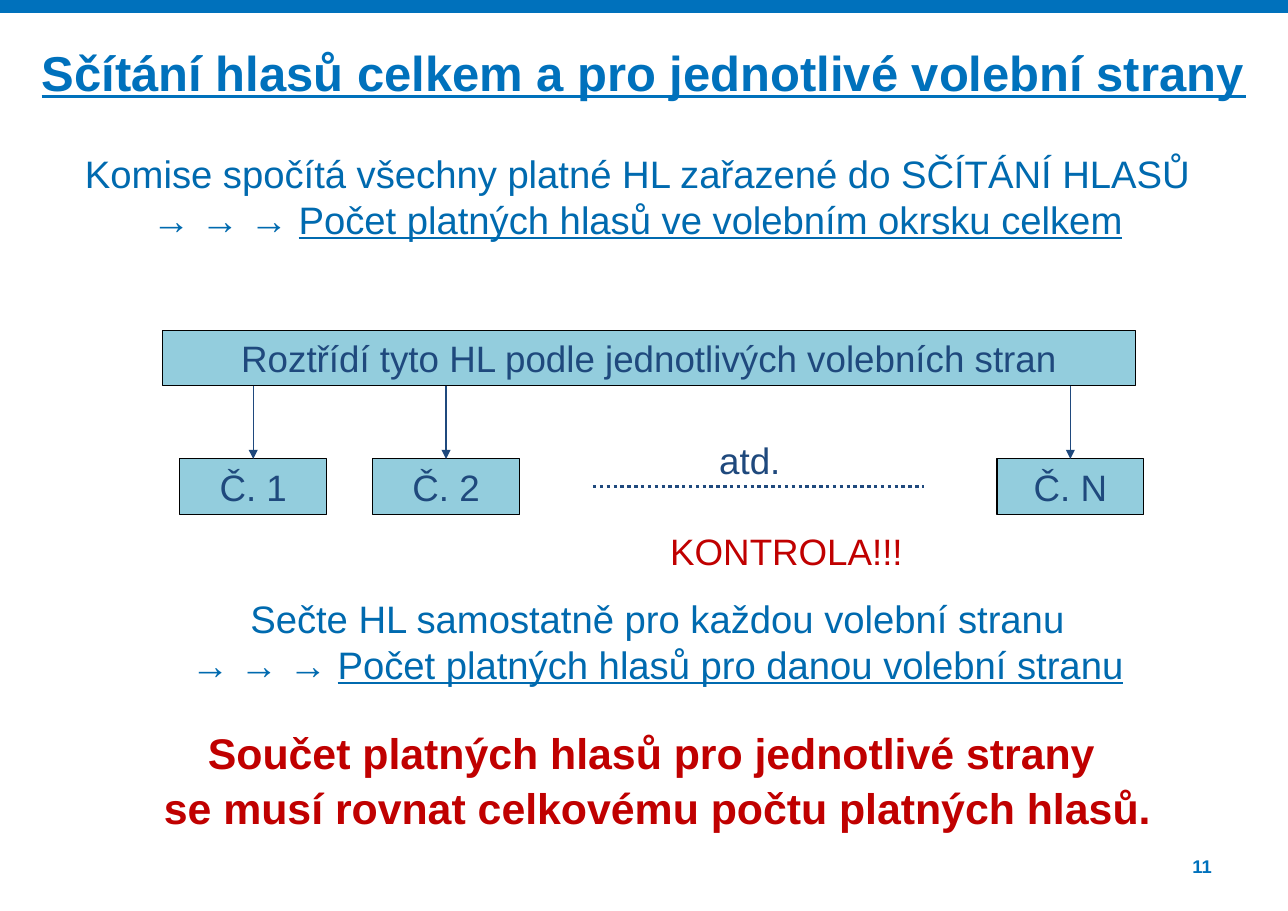
from pptx import Presentation, util as u
from pptx.dml.color import RGBColor
from pptx.enum import dml, shapes, text
from pptx.oxml.ns import qn
from lxml import etree

BLUE, DEEP, NAVY, RED, PALE = "0071BC", "006AAF", "1F497D", "C00000", "93CDDD"
ARROWS = "→ → → "


def color(code):
    return RGBColor.from_string(code)


class Page:
    font = "Arial"

    def __init__(self, deck):
        self.slide = deck.slides.add_slide(deck.slide_layouts[5])

    def words(self, shape, lines, size, ink, bold=False, under=None, align="CENTER",
              inset=(7.2, 3.6), wrap=True, gap=0):
        frame = shape.text_frame
        frame.text = lines
        frame.word_wrap = wrap
        frame.auto_size = text.MSO_AUTO_SIZE.NONE
        frame.vertical_anchor = text.MSO_ANCHOR.TOP
        frame.margin_left = frame.margin_right = u.Pt(inset[0])
        frame.margin_top = frame.margin_bottom = u.Pt(inset[1])
        if under:
            run = frame.paragraphs[-1].add_run()
            run.text = under
            run.font.underline = True
        for i, para in enumerate(frame.paragraphs):
            para.alignment = text.PP_ALIGN[align]
            para.space_before = u.Pt(gap if i else 0)
            for run in para.runs:
                run.font.name = self.font
                run.font.size = u.Pt(size)
                run.font.bold = bold
                run.font.color.rgb = color(ink)

    def title(self, area, lines, size, ink):
        shape = self.slide.shapes.title
        shape.left, shape.top, shape.width, shape.height = map(u.Pt, area)
        self.words(shape, lines, size, ink, bold=True, inset=(0, 0), wrap=False)
        shape.text_frame.paragraphs[0].runs[0].font.underline = True

    def label(self, area, lines, size, ink, **style):
        shape = self.slide.shapes.add_textbox(*map(u.Pt, area))
        self.words(shape, lines, size, ink, **style)

    def box(self, area, fill, lines="", edge=None):
        shape = self.slide.shapes.add_shape(shapes.MSO_SHAPE.RECTANGLE, *map(u.Pt, area))
        shape.shadow.inherit = False
        shape.fill.solid()
        shape.fill.fore_color.rgb = color(fill)
        if edge:
            shape.line.color.rgb = color(edge)
            shape.line.width = u.Pt(0.75)
        else:
            shape.line.fill.background()
        if lines:
            self.words(shape, lines, 24, NAVY)
        return shape

    def line(self, ends, ink, width, dash=None, goal=None):
        link = self.slide.shapes.add_connector(
            shapes.MSO_CONNECTOR.STRAIGHT, *map(u.Pt, ends))
        link.line.color.rgb = color(ink)
        link.line.width = u.Pt(width)
        if dash:
            link.line.dash_style = dash
        props = link._element.spPr
        if goal is not None:
            link.end_connect(goal, 0)
            etree.SubElement(props.find(qn("a:ln")), qn("a:tailEnd"), type="triangle")
        etree.SubElement(props, qn("a:effectLst"))


def main():
    deck = Presentation()
    deck.slide_width, deck.slide_height = u.Pt(841.68), u.Pt(595.44)
    page = Page(deck)

    page.box((0, 0, 841.68, 8.5), BLUE)
    page.label((736, 558.7, 56, 15), "11", 12, BLUE, bold=True, align="RIGHT", inset=(0, 0))
    page.title((26.5, 27.5, 788.5, 60), "Sčítání hlasů celkem a pro jednotlivé volební strany",
               32, BLUE)
    page.label((41, 94.5, 751, 68),
               "Komise spočítá všechny platné HL zařazené do SČÍTÁNÍ HLASŮ\v" + ARROWS,
               25, DEEP, under="Počet platných hlasů ve volebním okrsku celkem")

    page.box((106, 216, 636, 36), PALE,
             "Roztřídí tyto HL podle jednotlivých volebních stran", "000000")
    wide = 96
    for left, name in ((117.5, "Č. 1"), (243.5, "Č. 2"), (651.5, "Č. N")):
        party = page.box((left, 300, wide, 36.5), PALE, name, "000000")
        mid = left + wide / 2
        page.line((mid, 252, mid, 300), NAVY, 0.75, goal=party)
    page.line((387.5, 318, 603.5, 318), NAVY, 2.25, dash=dml.MSO_LINE.ROUND_DOT)
    page.label((448, 282.5, 84, 36.5), "atd.", 24, NAVY)
    page.label((430, 342, 168, 36), "KONTROLA!!!", 24, RED)

    page.label((41, 385.5, 777, 97),
               "Sečte HL samostatně pro každou volební stranu\v" + ARROWS,
               25, DEEP, under="Počet platných hlasů pro danou volební stranu")
    page.label((47, 475, 765, 72),
               "Součet platných hlasů pro jednotlivé strany \n"
               "se musí rovnat celkovému počtu platných hlasů.",
               28, RED, bold=True, inset=(0, 0), wrap=False, gap=2)

    deck.save("out.pptx")


if __name__ == "__main__":
    main()
